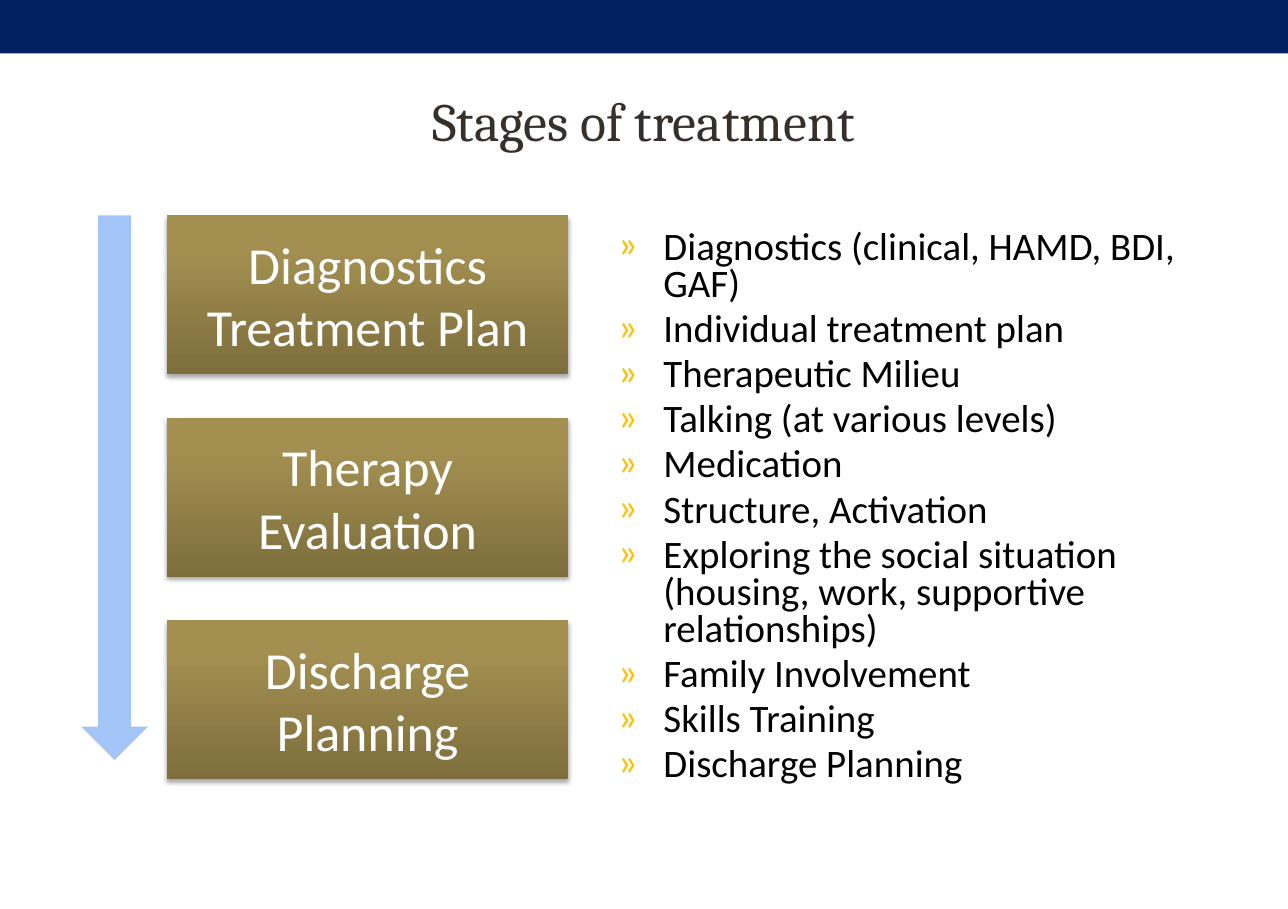
from copy import deepcopy

from lxml.etree import SubElement
from pptx import Presentation
from pptx.dml.color import RGBColor
from pptx.enum.shapes import MSO_SHAPE
from pptx.enum.text import MSO_ANCHOR, MSO_AUTO_SIZE, PP_ALIGN
from pptx.oxml.ns import qn
from pptx.util import Pt

COLORS = {
    "band": "002060",
    "title": "37302A",
    "text": "000000",
    "bullet": "FFC000",
    "arrow": "659EF1",
    "box_text": "FFFFFF",
    "shadow": "000000",
}
BOX_GRADIENT = [(0, "7D6E3D"), (0.8, "A38F50"), (1, "A5904E")]
STAGES = [
    ("Diagnostics", "Treatment Plan"),
    ("Therapy", "Evaluation"),
    ("Discharge", "Planning"),
]
STEPS = [
    "Diagnostics (clinical, HAMD, BDI, GAF)",
    "Individual treatment plan",
    "Therapeutic Milieu",
    "Talking (at various levels)",
    "Medication",
    "Structure, Activation",
    "Exploring the social situation (housing, work, supportive relationships)",
    "Family Involvement",
    "Skills Training",
    "Discharge Planning",
]


def add_xml(parent, tag, **attrs):
    return SubElement(parent, qn(tag), attrs)


class SlideBuilder:
    heading_font = "Cambria"
    body_font = "Calibri"

    def __init__(self, slide):
        self.slide = slide

    def place(self, sp, x, y, w, h):
        sp.left, sp.top, sp.width, sp.height = Pt(x), Pt(y), Pt(w), Pt(h)

    def run(self, p, text, font, size, color):
        r = p.add_run()
        r.text = text
        r.font.name = font
        r.font.size = Pt(size)
        r.font.color.rgb = RGBColor.from_string(COLORS[color])

    def paragraphs(self, tf, count):
        return [tf.paragraphs[0]] + [tf.add_paragraph() for _ in range(count - 1)]

    def title(self, text, x, y, w, h):
        sp = self.slide.shapes.title
        self.place(sp, x, y, w, h)
        tf = sp.text_frame
        tf.auto_size = MSO_AUTO_SIZE.NONE
        tf.vertical_anchor = MSO_ANCHOR.MIDDLE
        p = tf.paragraphs[0]
        p.alignment = PP_ALIGN.CENTER
        self.run(p, text, self.heading_font, 32, "title")

    def bullets(self, items, x, y, w, h):
        sp = self.slide.placeholders[1]
        self.place(sp, x, y, w, h)
        tf = sp.text_frame
        tf.auto_size = MSO_AUTO_SIZE.NONE
        tf.vertical_anchor = MSO_ANCHOR.TOP
        for i, (p, item) in enumerate(zip(self.paragraphs(tf, len(items)), items)):
            pPr = p._p.get_or_add_pPr()
            pPr.set("marL", str(Pt(27)))
            pPr.set("indent", str(Pt(-27)))
            add_xml(add_xml(pPr, "a:buClr"), "a:srgbClr", val=COLORS["bullet"])
            add_xml(pPr, "a:buFont", typeface=self.body_font)
            add_xml(pPr, "a:buChar", char="»")
            p.line_spacing = 0.8
            p.space_before = Pt(4.6 if i else 0)
            self.run(p, item, self.body_font, 23.1, "text")

    def shape(self, kind, x, y, w, h):
        sp = self.slide.shapes.add_shape(kind, Pt(x), Pt(y), Pt(w), Pt(h))
        sp.shadow.inherit = False
        sp.line.fill.background()
        return sp

    def solid(self, kind, x, y, w, h, color, opacity=100):
        sp = self.shape(kind, x, y, w, h)
        sp.fill.solid()
        sp.fill.fore_color.rgb = RGBColor.from_string(COLORS[color])
        if opacity < 100:
            clr = sp._element.spPr.find(qn("a:solidFill"))[0]
            add_xml(clr, "a:alpha", val=str(opacity * 1000))

    def stage_box(self, lines, x, y, w, h):
        sp = self.shape(MSO_SHAPE.RECTANGLE, x, y, w, h)
        spPr = sp._element.spPr

        # Three-stop gradient, dark at the bottom
        sp.fill.gradient()
        sp.fill.gradient_angle = 90
        stops = spPr.find(qn("a:gradFill")).find(qn("a:gsLst"))
        stops.append(deepcopy(stops[0]))
        for stop, (position, color) in zip(sp.fill.gradient_stops, BOX_GRADIENT):
            stop.position = position
            stop.color.rgb = RGBColor.from_string(color)

        # Soft shadow below
        shadow = add_xml(spPr.find(qn("a:effectLst")), "a:outerShdw",
                         blurRad=str(Pt(3.1)), dist=str(Pt(1.8)),
                         dir="5400000", rotWithShape="0")
        clr = add_xml(shadow, "a:srgbClr", val=COLORS["shadow"])
        add_xml(clr, "a:alpha", val="35000")

        tf = sp.text_frame
        tf.word_wrap = False
        tf.vertical_anchor = MSO_ANCHOR.MIDDLE
        for p, line in zip(self.paragraphs(tf, len(lines)), lines):
            p.alignment = PP_ALIGN.CENTER
            self.run(p, line, self.body_font, 30.9, "box_text")


def main():
    prs = Presentation()
    prs.slide_width, prs.slide_height = Pt(765.36), Pt(540)
    s = SlideBuilder(prs.slides.add_slide(prs.slide_layouts[1]))

    # Top band and title
    s.solid(MSO_SHAPE.RECTANGLE, 0, 0, 765.36, 31.7, "band")
    s.title("Stages of treatment", 38, 26, 689, 90.5)

    # List of steps
    s.bullets(STEPS, 360, 133.4, 367.2, 360.7)

    # Stage boxes, evenly spaced
    for i, lines in enumerate(STAGES):
        s.stage_box(lines, 99.3, 128 + i * 120.3, 238.2, 94.4)

    # Arrow showing the course of treatment
    s.solid(MSO_SHAPE.DOWN_ARROW, 48.4, 128, 39.5, 323.5, "arrow", opacity=60)

    prs.save("out.pptx")


if __name__ == "__main__":
    main()
